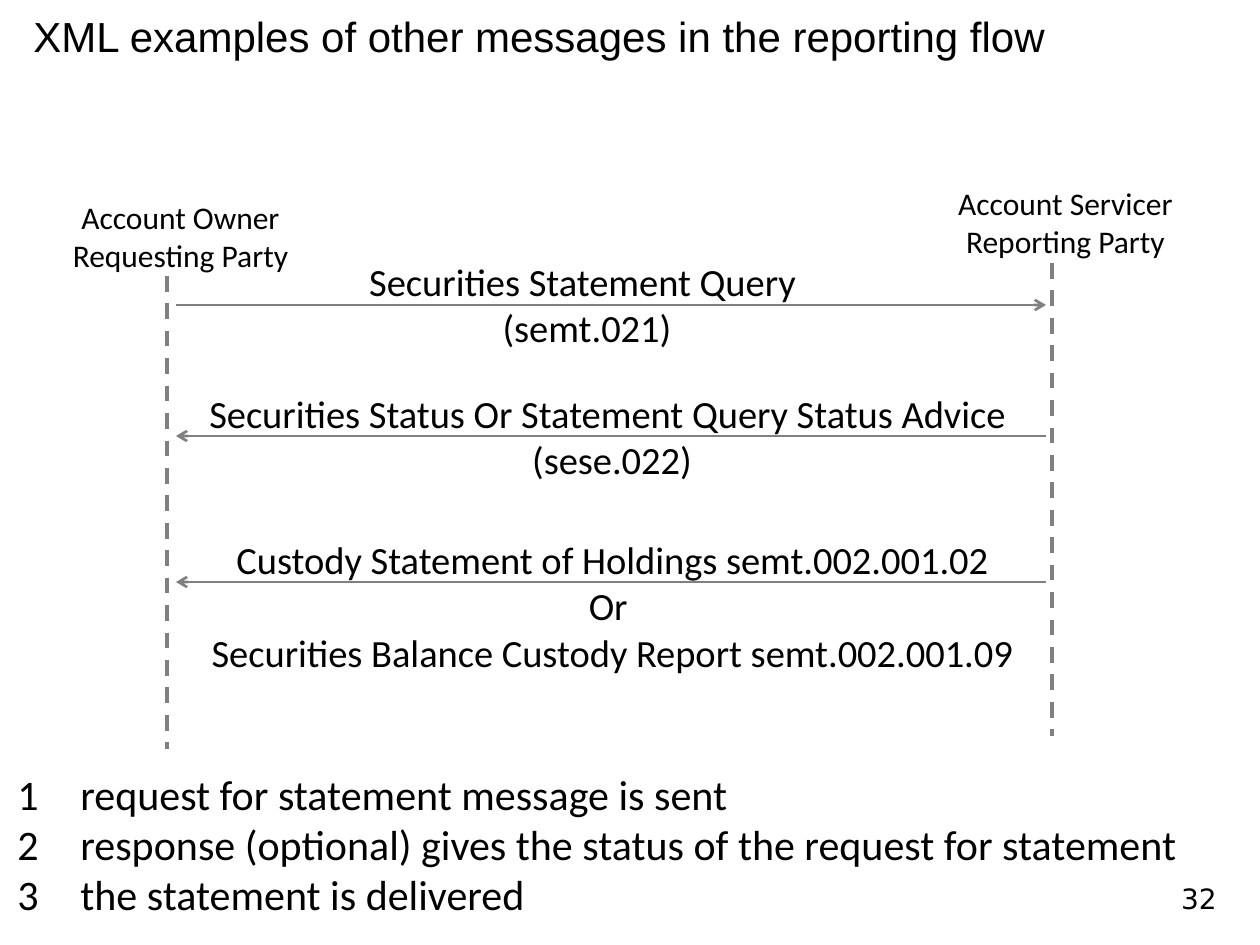
import dataclasses

import pptx
import pptx.dml.color
import pptx.enum.dml
import pptx.enum.shapes
import pptx.enum.text
import pptx.oxml.ns
import pptx.oxml.xmlchemy
import pptx.util

PX_PER_INCH = 126
ALIGN = pptx.enum.text.PP_ALIGN
ANCHOR = pptx.enum.text.MSO_ANCHOR


@dataclasses.dataclass(frozen=True)
class Theme:
    text: str = "000000"
    line: str = "808080"
    paper: str = "FFFFFF"
    body_font: str = "Calibri"
    title_font: str = "Arial"
    number_font: str = "DejaVu Sans"
    title_size: int = 24
    party_size: int = 18
    message_size: int = 22
    step_size: int = 24
    number_size: int = 16
    lifeline_width: float = 2.25
    arrow_width: float = 1.5


@dataclasses.dataclass(frozen=True)
class Box:
    left: int
    top: int
    width: int
    height: int


@dataclasses.dataclass(frozen=True)
class Party:
    label: tuple[str, ...]
    box: Box
    lifeline_x: int
    lifeline_top: int


@dataclasses.dataclass(frozen=True)
class Message:
    label: tuple[str, ...]
    box: Box
    arrow_y: int
    to_servicer: bool = False


THEME = Theme()
LIFELINE_LENGTH = 473
OWNER_END, SERVICER_END = 176, 1046
INDENT = 63

PARTIES = (
    Party(("Account Owner", "Requesting Party"), Box(59, 192, 243, 89), 167, 276),
    Party(("Account Servicer", "Reporting Party"), Box(944, 178, 243, 89), 1052, 263),
)
MESSAGES = (
    Message(("Securities Statement Query ", "(semt.021)"),
            Box(354, 252, 466, 106), 305, to_servicer=True),
    Message(("Securities Status Or Statement Query Status Advice ", "(sese.022)"),
            Box(192, 384, 840, 106), 436),
    Message(("Custody Statement of Holdings semt.002.001.02", "Or ",
             "Securities Balance Custody Report semt.002.001.09"),
            Box(194, 530, 837, 152), 582),
)
STEPS = (
    "request for statement message is sent",
    "response (optional) gives the status of the request for statement",
    "the statement is delivered",
)


def px(n: int) -> pptx.util.Emu:
    return pptx.util.Emu(round(n * 914400 / PX_PER_INCH))


def rgb(value: str) -> pptx.dml.color.RGBColor:
    return pptx.dml.color.RGBColor.from_string(value)


def add_text(slide, box: Box, lines: tuple[str, ...], size: int,
             font: str = THEME.body_font, align=ALIGN.CENTER,
             anchor=ANCHOR.TOP, wrap: bool = False, hanging: int = 0):
    """Add one paragraph per line; unwrapped boxes grow with their text."""
    sp = slide.shapes.add_textbox(px(box.left), px(box.top), px(box.width), px(box.height))
    tf = sp.text_frame
    tf.word_wrap = wrap
    tf.vertical_anchor = anchor
    if not wrap:
        tf.auto_size = pptx.enum.text.MSO_AUTO_SIZE.SHAPE_TO_FIT_TEXT
    for i, line in enumerate(lines):
        p = tf.add_paragraph() if i else tf.paragraphs[0]
        p.text = line
        p.alignment = align
        if hanging:
            pPr = p._p.get_or_add_pPr()
            pPr.set("marL", str(px(hanging)))
            pPr.set("indent", str(-px(hanging)))
        p.font.name = font
        p.font.size = pptx.util.Pt(size)
        p.font.color.rgb = rgb(THEME.text)
    return sp


def add_line(slide, x1: int, y1: int, x2: int, y2: int, width: float):
    s = slide.shapes.add_connector(
        pptx.enum.shapes.MSO_CONNECTOR.STRAIGHT, px(x1), px(y1), px(x2), px(y2))
    s.line.color.rgb = rgb(THEME.line)
    s.line.width = pptx.util.Pt(width)
    s._element.spPr.append(pptx.oxml.xmlchemy.OxmlElement("a:effectLst"))
    return s


def add_party(slide, party: Party) -> None:
    add_text(slide, party.box, party.label, THEME.party_size)
    s = add_line(slide, party.lifeline_x, party.lifeline_top, party.lifeline_x,
                 party.lifeline_top + LIFELINE_LENGTH, THEME.lifeline_width)
    s.line.dash_style = pptx.enum.dml.MSO_LINE.DASH


def add_message(slide, message: Message) -> None:
    start, end = OWNER_END, SERVICER_END
    if not message.to_servicer:
        start, end = end, start
    s = add_line(slide, start, message.arrow_y, end, message.arrow_y, THEME.arrow_width)
    head = pptx.oxml.xmlchemy.OxmlElement("a:tailEnd")
    head.set("type", "arrow")
    s._element.spPr.find(pptx.oxml.ns.qn("a:ln")).append(head)
    add_text(slide, message.box, message.label, THEME.message_size)


def main() -> None:
    prs = pptx.Presentation()
    prs.slide_width, prs.slide_height = px(1260), px(945)
    slide = prs.slides.add_slide(prs.slide_layouts[6])

    add_text(slide, Box(21, 0, 1226, 71),
             ("XML examples of other messages in the reporting flow",),
             THEME.title_size, THEME.title_font, ALIGN.LEFT, ANCHOR.MIDDLE, wrap=True)
    for party in PARTIES:
        add_party(slide, party)
    for message in MESSAGES:
        add_message(slide, message)

    steps = tuple(f"{n} \t{step}" for n, step in enumerate(STEPS, 1))
    sp = add_text(slide, Box(5, 762, 1196, 165), steps, THEME.step_size,
                  align=ALIGN.LEFT, hanging=INDENT)
    sp.fill.solid()
    sp.fill.fore_color.rgb = rgb(THEME.paper)

    add_text(slide, Box(1124, 882, 105, 32), ("32",), THEME.number_size,
             THEME.number_font, ALIGN.RIGHT, ANCHOR.MIDDLE, wrap=True)
    prs.save("out.pptx")


if __name__ == "__main__":
    main()
